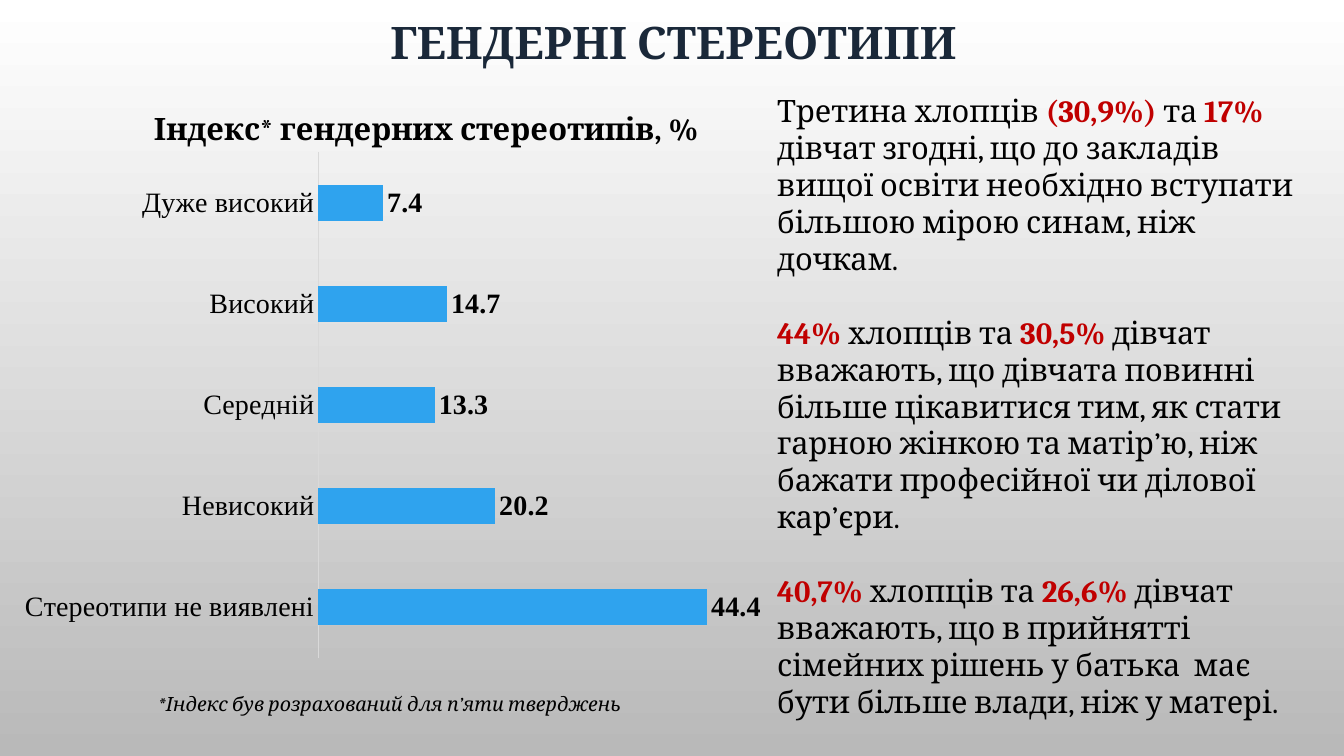
import pptx
import pptx.chart.data
import pptx.dml.color
import pptx.enum.chart
import pptx.enum.text
import pptx.oxml
import pptx.oxml.ns
import pptx.util

COLORS = {
    "top": "FFFFFF",
    "bottom": "B9B9B9",
    "title": "1A2839",
    "text": "000000",
    "accent": "C00000",
    "bar": "2FA3EE",
    "axis": "D9D9D9",
}
SERIF, CHART_FONT = "Cambria", "Times New Roman"
WIDTH, HEIGHT = pptx.util.Inches(13.33), pptx.util.Inches(7.5)

INDEX = {
    "Дуже високий": 7.4,
    "Високий": 14.7,
    "Середній": 13.3,
    "Невисокий": 20.2,
    "Стереотипи не виявлені": 44.4,
}
# Bars enclose the highlighted figures
FINDINGS = [
    "Третина хлопців |(30,9%) |та |17% |дівчат згодні, що до закладів вищої освіти "
    "необхідно вступати більшою мірою синам, ніж дочкам.",
    "|44% |хлопців та |30,5% |дівчат вважають, що дівчата повинні більше цікавитися тим, "
    "як стати гарною жінкою та матір’ю, ніж бажати професійної чи ділової кар’єри.",
    "|40,7% |хлопців та |26,6% |дівчат вважають, що в прийнятті сімейних рішень у батька  "
    "має бути більше влади, ніж у матері.",
]


def rgb(name):
    return pptx.dml.color.RGBColor.from_string(COLORS[name])


def share(x, y, w, h):
    """Turn percentages of the slide into a position and size."""
    return [int(size * pct / 100) for size, pct in
            ((WIDTH, x), (HEIGHT, y), (WIDTH, w), (HEIGHT, h))]


def style(font, size, name=SERIF, color="text", bold=False, italic=False):
    font.size, font.name = pptx.util.Pt(size), name
    font.bold, font.italic = bold, italic
    font.color.rgb = rgb(color)


def add_text(s, area, paragraphs, size, color="text", bold=False, italic=False,
             align=None, anchor=None, line=None, gap=0):
    tf = s.shapes.add_textbox(*share(*area)).text_frame
    tf.word_wrap = True
    tf.vertical_anchor = anchor
    for i, text in enumerate(paragraphs):
        p = tf.paragraphs[0] if i == 0 else tf.add_paragraph()
        p.alignment, p.line_spacing = align, line
        if i:
            p.space_before = pptx.util.Pt(gap)
        for j, part in enumerate(text.split("|")):
            if part:
                r = p.add_run()
                r.text = part
                hot = j % 2 == 1
                style(r.font, size, color="accent" if hot else color,
                      bold=bold or hot, italic=italic)


def set_plot_layout(chart, **percents):
    """Pin the inner plot area, in percent of the chart."""
    area = chart._chartSpace.chart.plotArea
    for old in area.findall(pptx.oxml.ns.qn("c:layout")):
        area.remove(old)
    values = "".join(f'<c:{k} val="{v / 100:g}"/>' for k, v in percents.items())
    area.insert(0, pptx.oxml.parse_xml(
        f'<c:layout {pptx.oxml.ns.nsdecls("c")}><c:manualLayout>'
        '<c:layoutTarget val="inner"/><c:xMode val="edge"/><c:yMode val="edge"/>'
        f'{values}</c:manualLayout></c:layout>'))


def add_index_chart(s, area, title, data):
    cd = pptx.chart.data.CategoryChartData()
    cd.categories = list(data)
    cd.add_series("Індекс", list(data.values()))
    chart = s.shapes.add_chart(
        pptx.enum.chart.XL_CHART_TYPE.BAR_CLUSTERED, *share(*area), cd).chart
    style(chart.font, 10, "Calibri")
    chart.has_legend = False
    chart.has_title = True
    p = chart.chart_title.text_frame.paragraphs[0]
    r = p.add_run()
    r.text = title
    style(r.font, 22, bold=True)
    set_plot_layout(chart, x=36.7, y=11.2, w=54.1, h=86.3)

    # Axes
    cat, val = chart.category_axis, chart.value_axis
    cat.reverse_order = True
    cat.major_tick_mark = pptx.enum.chart.XL_TICK_MARK.NONE
    cat.format.line.color.rgb = rgb("axis")
    cat.format.line.width = pptx.util.Pt(0.75)
    style(cat.tick_labels.font, 20, CHART_FONT)
    val.minimum_scale, val.maximum_scale = 0, 50
    val.has_major_gridlines = False
    val.visible = False

    # Bars and their labels
    plot = chart.plots[0]
    plot.gap_width = 182
    plot.vary_by_categories = False
    bars = plot.series[0]
    bars.format.fill.solid()
    bars.format.fill.fore_color.rgb = rgb("bar")
    labels = bars.data_labels
    labels.show_value = True
    labels.position = pptx.enum.chart.XL_LABEL_POSITION.OUTSIDE_END
    style(labels.font, 20, CHART_FONT, bold=True)


def set_background(s):
    fill = s.background.fill
    fill.gradient()
    fill.gradient_angle = 270
    for stop, name in zip(fill.gradient_stops, ("top", "bottom")):
        stop.color.rgb = rgb(name)


def main():
    prs = pptx.Presentation()
    prs.slide_width, prs.slide_height = WIDTH, HEIGHT
    s = prs.slides.add_slide(prs.slide_layouts[6])
    set_background(s)

    # Heading
    add_text(s, (5.33, 0.93, 89.57, 10), ["ГЕНДЕРНІ СТЕРЕОТИПИ"], 32, color="title",
             bold=True, align=pptx.enum.text.PP_ALIGN.CENTER,
             anchor=pptx.enum.text.MSO_ANCHOR.MIDDLE, line=0.9)

    # Chart with its footnote
    add_index_chart(s, (1.58, 11.47, 60.24, 77.47),
                    "Індекс* гендерних стереотипів, %", INDEX)
    add_text(s, (11.03, 90.93, 44.34, 4.53),
             ["*Індекс був розрахований для п’яти тверджень"], 14, italic=True)

    # Findings
    add_text(s, (57.09, 11.47, 40.14, 85.73), FINDINGS, 22, gap=26.4)

    prs.save("out.pptx")


if __name__ == "__main__":
    main()
